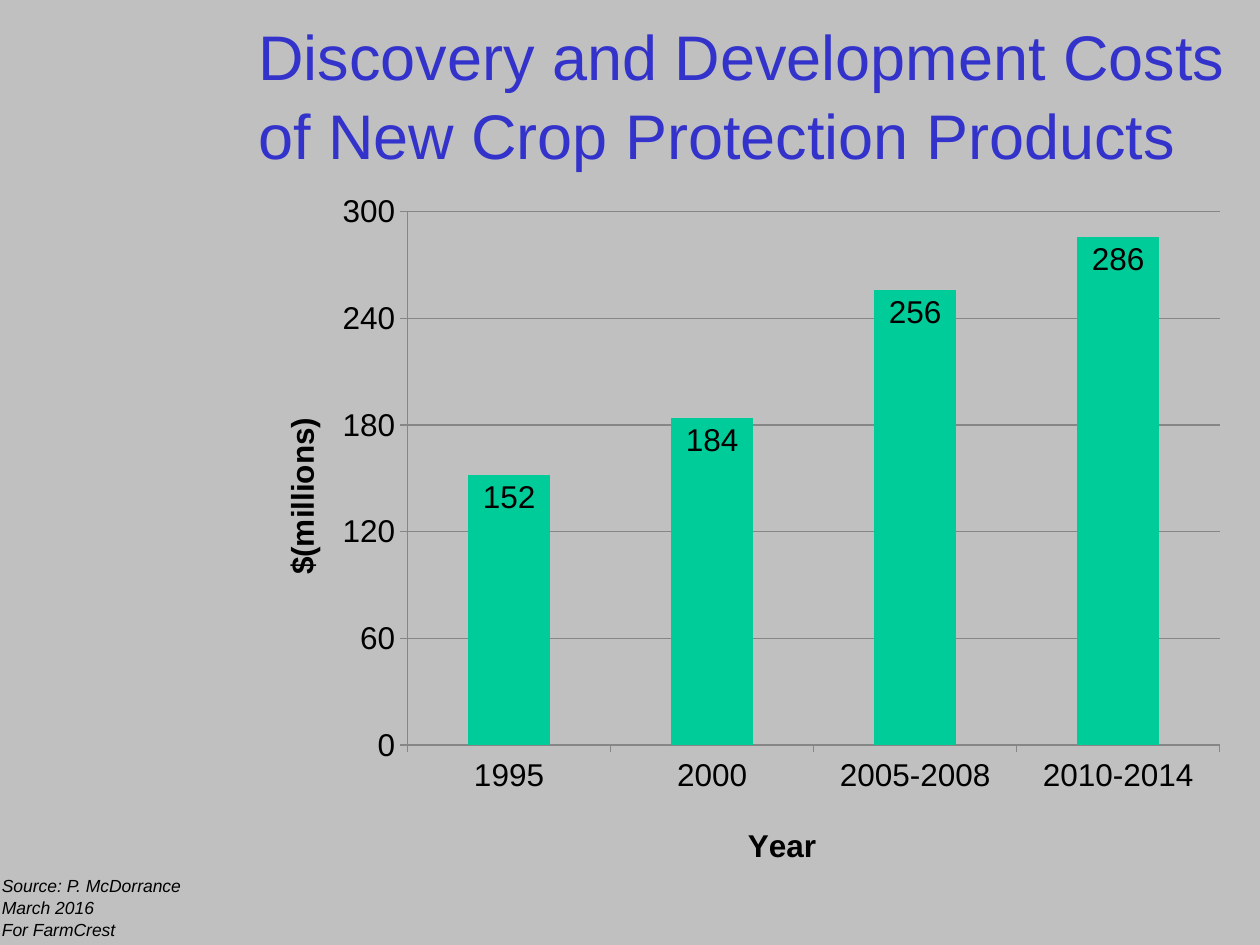
from dataclasses import dataclass

from lxml import etree
from pptx import Presentation
from pptx.chart.data import CategoryChartData
from pptx.dml.color import RGBColor
from pptx.enum.chart import XL_CHART_TYPE, XL_LABEL_POSITION, XL_TICK_MARK
from pptx.enum.text import MSO_ANCHOR, MSO_AUTO_SIZE
from pptx.oxml.ns import qn
from pptx.util import Pt

COLUMNS = XL_CHART_TYPE.COLUMN_CLUSTERED
INSIDE_END = XL_LABEL_POSITION.INSIDE_END
TICK_OUT, TICK_NONE = XL_TICK_MARK.OUTSIDE, XL_TICK_MARK.NONE
MIDDLE, TOP = MSO_ANCHOR.MIDDLE, MSO_ANCHOR.TOP
GROW, FIXED = MSO_AUTO_SIZE.SHAPE_TO_FIT_TEXT, MSO_AUTO_SIZE.NONE


@dataclass(frozen=True)
class Theme:
    font: str = "Arial"
    background: RGBColor = RGBColor(0xC0, 0xC0, 0xC0)
    heading: RGBColor = RGBColor(0x33, 0x33, 0xCC)
    ink: RGBColor = RGBColor(0, 0, 0)
    bar: RGBColor = RGBColor(0, 0xCC, 0x99)
    rule: RGBColor = RGBColor(0x86, 0x86, 0x86)
    heading_size: int = 36
    chart_size: int = 18
    source_size: int = 10


THEME = Theme()
HEADING = "Discovery and Development Costs of New Crop Protection Products"
SOURCE = ["Source: P. McDorrance", "March 2016", "For FarmCrest International"]
COSTS = {"1995": 152, "2000": 184, "2005-2008": 256, "2010-2014": 286}


def set_values(target, values):
    for name, value in values.items():
        setattr(target, name, value)


def style_font(font, size, color=THEME.ink, **extra):
    set_values(font, {"name": THEME.font, "size": Pt(size), **extra})
    font.color.rgb = color


def add_text(slide, box, lines, frame_format, size, color=THEME.ink, **extra):
    frame = slide.shapes.add_textbox(*map(Pt, box)).text_frame
    set_values(frame, frame_format)
    frame.text = "\n".join(lines)
    for paragraph in frame.paragraphs:
        paragraph.line_spacing = 1.05
        style_font(paragraph.runs[0].font, size, color, **extra)


def place(parent, before, **fractions):
    """Fix a chart part at fractions of the chart area, ahead of the named siblings."""
    for old in parent.findall(qn("c:layout")):
        parent.remove(old)
    layout = etree.Element(qn("c:layout"))
    manual = etree.SubElement(layout, qn("c:manualLayout"))
    settings = {"xMode": "edge", "yMode": "edge", **fractions}
    if "w" in fractions:
        settings = {"layoutTarget": "inner", **settings}
    for tag, value in settings.items():
        etree.SubElement(manual, qn(f"c:{tag}")).set("val", str(value))
    follower = next(child for child in parent if child.tag in map(qn, before))
    follower.addprevious(layout)


def style_line(line):
    line.color.rgb = THEME.rule
    line.width = Pt(0.75)


def style_axis(axis, title, x, y):
    set_values(axis, {"major_tick_mark": TICK_OUT, "minor_tick_mark": TICK_NONE})
    style_line(axis.format.line)
    style_font(axis.tick_labels.font, THEME.chart_size)
    frame = axis.axis_title.text_frame
    frame.text = title
    style_font(frame.paragraphs[0].runs[0].font, THEME.chart_size, bold=True)
    place(axis.axis_title._element, ["c:overlay", "c:spPr", "c:txPr"], x=x, y=y)


def add_cost_chart(slide, box):
    data = CategoryChartData()
    data.categories = list(COSTS)
    data.add_series("Series 1", list(COSTS.values()))
    chart = slide.shapes.add_chart(COLUMNS, *map(Pt, box), data).chart
    set_values(chart, {"has_legend": False, "has_title": False})
    style_font(chart.font, THEME.chart_size)

    style_axis(chart.category_axis, "Year", x=0.5, y=0.91)
    costs_axis = chart.value_axis
    style_axis(costs_axis, "$(millions)", x=0.03, y=0.33)
    set_values(costs_axis, {"minimum_scale": 0, "maximum_scale": 300, "major_unit": 60})
    style_line(costs_axis.major_gridlines.format.line)

    plot = chart.plots[0]
    set_values(plot, {"gap_width": 150, "vary_by_categories": False, "has_data_labels": True})
    set_values(plot.data_labels, {"show_value": True, "position": INSIDE_END})
    style_font(plot.data_labels.font, THEME.chart_size)
    fill = plot.series[0].format.fill
    fill.solid()
    fill.fore_color.rgb = THEME.bar
    place(plot._element.getparent(), ["c:barChart"], x=0.163, y=0.045, w=0.818, h=0.76)


def main():
    deck = Presentation()
    set_values(deck, {"slide_width": Pt(720), "slide_height": Pt(540)})
    slide = deck.slides.add_slide(deck.slide_layouts[6])
    background = slide.background.fill
    background.solid()
    background.fore_color.rgb = THEME.background

    add_text(slide, (140.4, 8, 574, 90), [HEADING],
             {"word_wrap": True, "vertical_anchor": MIDDLE, "auto_size": FIXED},
             THEME.heading_size, THEME.heading)
    add_cost_chart(slide, (140.4, 103, 567.4, 401))
    add_text(slide, (-6, 496, 134, 44), SOURCE,
             {"word_wrap": False, "vertical_anchor": TOP, "auto_size": GROW},
             THEME.source_size, italic=True)
    deck.save("out.pptx")


if __name__ == "__main__":
    main()
